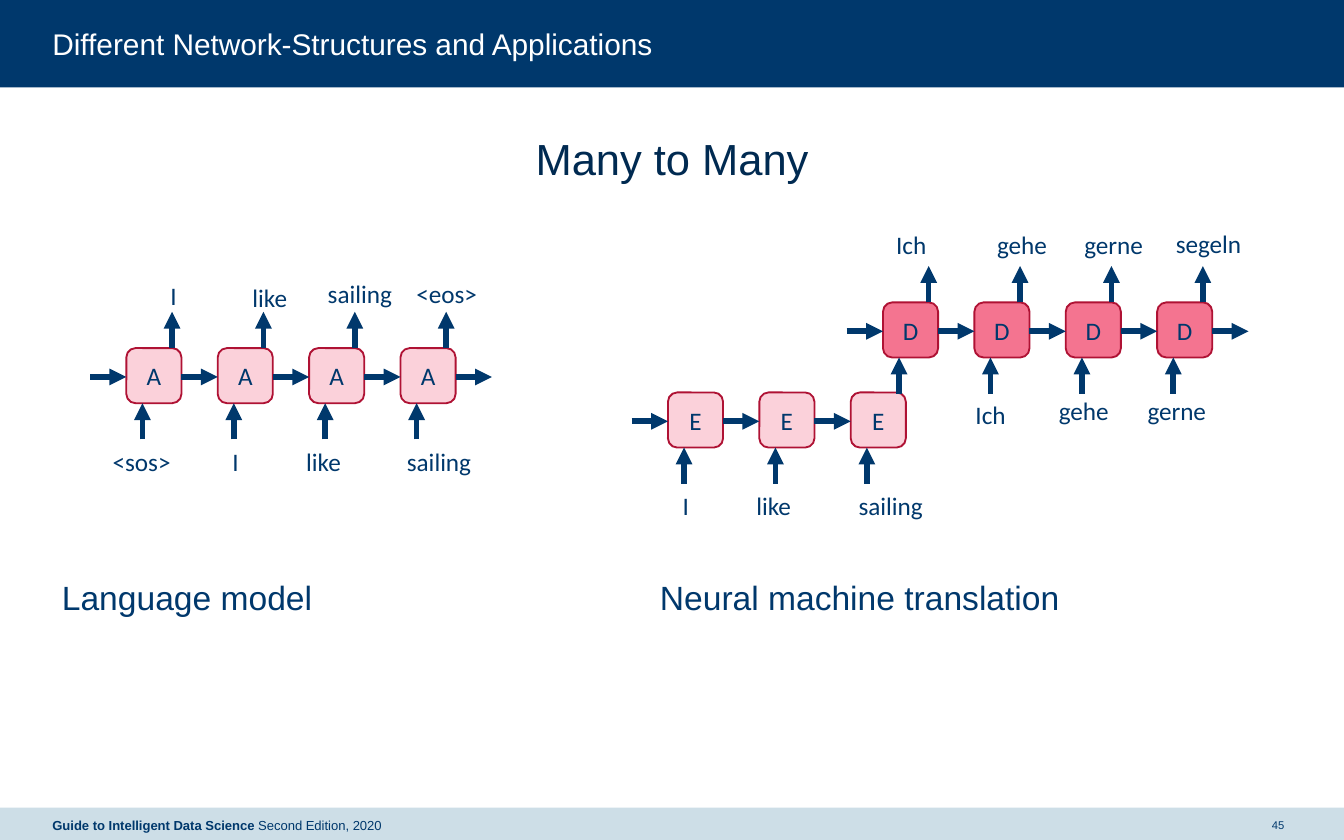
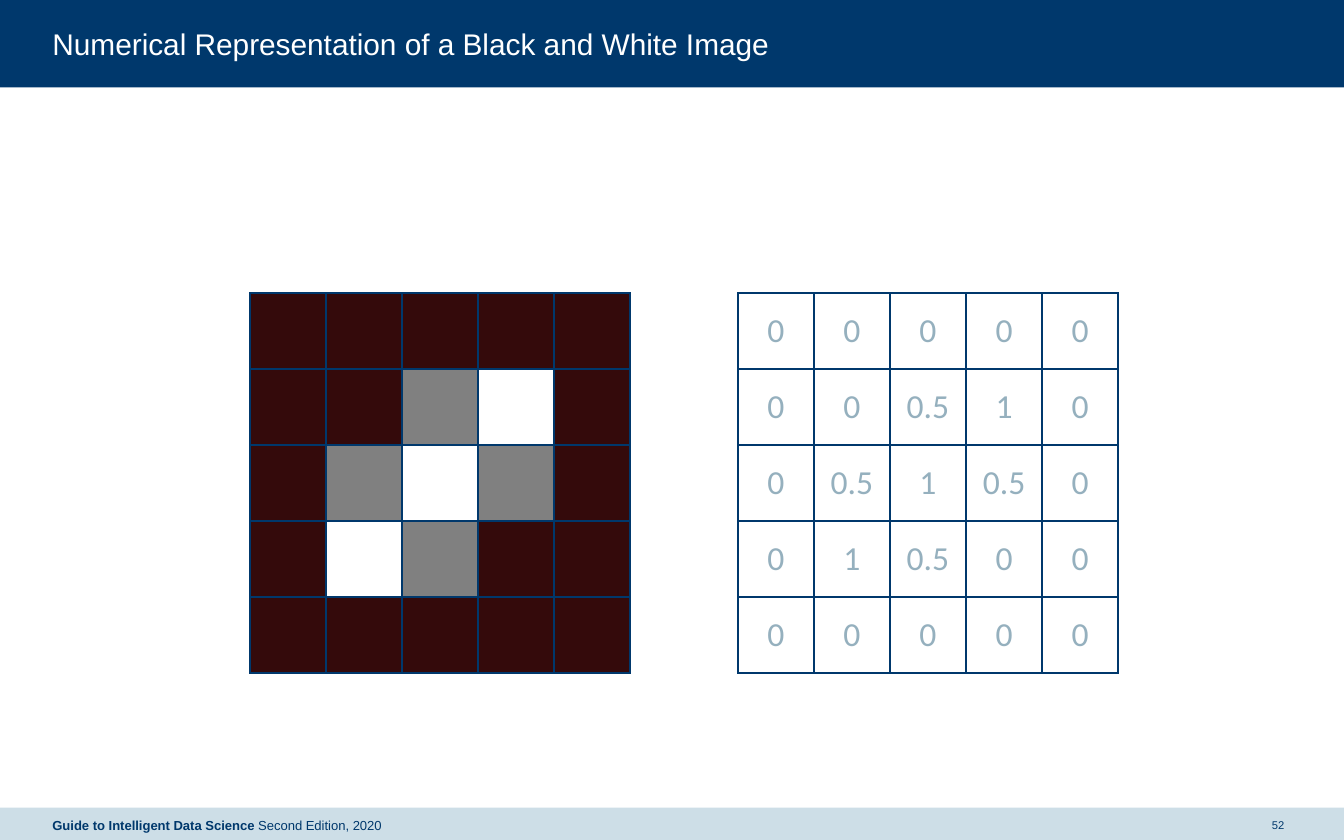
from dataclasses import dataclass

from lxml import etree
from pptx import Presentation
from pptx import util as u
from pptx.dml.color import RGBColor
from pptx.enum import shapes, text
from pptx.oxml import ns


@dataclass(frozen=True)
class Theme:
    navy: str = "00386C"
    deep_navy: str = "002A51"
    footer_band: str = "CDDEE7"
    white: str = "FFFFFF"
    pale_pink: str = "FBD1DA"
    strong_pink: str = "F47490"
    crimson: str = "AF1234"
    black_pixel: str = "340A0B"
    grey_pixel: str = "808080"
    digit: str = "95B0BE"
    sans: str = "Arial"
    diagram: str = "Calibri"
    title_size: float = 16
    headline_size: float = 23.3
    caption_size: float = 18
    label_size: float = 13.5
    digit_size: float = 18
    footer_size: float = 7
    number_size: float = 6


THEME = Theme()
LEFT, MIDDLE = text.MSO_ANCHOR.TOP, text.MSO_ANCHOR.MIDDLE
CENTER = text.PP_ALIGN.CENTER
NO_INSET = (0, 0)
SIDES = ("left", "right"), ("top", "bottom")

# Network chains: equally spaced cells joined by short arrows
CELL, PITCH, ARROW = 0.41, 0.68, 0.27
INPUT_X, OUTPUT_X = 0.12, 0.34

# Each word: text, left, top, width
LANGUAGE_WORDS = [
    ("<sos>", 0.74, 3.27, 0.81), ("I", 1.63, 3.27, 0.41),
    ("like", 2.18, 3.27, 0.48), ("sailing", 2.93, 3.27, 0.87),
    ("I", 1.17, 2.04, 0.41), ("like", 1.78, 2.05, 0.52),
    ("sailing", 2.34, 2.02, 0.79), ("<eos>", 3, 2.02, 0.87),
]
ENCODER_WORDS = [
    ("I", 4.98, 3.6, 0.41), ("like", 5.53, 3.6, 0.63), ("sailing", 6.29, 3.6, 0.82),
]
DECODER_WORDS = [
    ("Ich", 6.57, 1.66, 0.54), ("gehe", 7.32, 1.66, 0.62),
    ("gerne", 7.97, 1.66, 0.77), ("segeln", 8.65, 1.65, 0.78),
    ("Ich", 7.16, 2.92, 0.5), ("gehe", 7.78, 2.89, 0.78), ("gerne", 8.44, 2.89, 0.8),
]

PIXELS = [
    [0, 0, 0, 0, 0],
    [0, 0, 0.5, 1, 0],
    [0, 0.5, 1, 0.5, 0],
    [0, 1, 0.5, 0, 0],
    [0, 0, 0, 0, 0],
]
SHADES = {0: THEME.black_pixel, 0.5: THEME.grey_pixel, 1: THEME.white}
GRID_SIZE = 2.83


def inches(*lengths):
    return [u.Inches(length) for length in lengths]


def rgb(colour):
    return RGBColor.from_string(colour)


def apply(target, formats):
    for name, value in formats.items():
        setattr(target, name, value)


def write(paragraph, words, size, colour, font=THEME.sans, bold=False):
    run = paragraph.add_run()
    run.text = words
    apply(run.font, {"name": font, "size": u.Pt(size), "bold": bold})
    run.font.color.rgb = rgb(colour)


def add_text(slide, box, words, size, colour, font=THEME.sans, bold=False,
             align=None, anchor=LEFT, inset=(0.1, 0.05)):
    """Add a wrapping text box and return its paragraph."""
    frame = slide.shapes.add_textbox(*inches(*box)).text_frame
    apply(frame, {"word_wrap": True, "vertical_anchor": anchor})
    for sides, margin in zip(SIDES, inset):
        apply(frame, {f"margin_{side}": u.Inches(margin) for side in sides})
    paragraph = frame.paragraphs[0]
    paragraph.alignment = align
    write(paragraph, words, size, colour, font, bold)
    return paragraph


def add_block(slide, kind, box, fill):
    block = slide.shapes.add_shape(kind, *inches(*box))
    block.shadow.inherit = False
    block.fill.solid()
    block.fill.fore_color.rgb = rgb(fill)
    block.line.fill.background()
    return block


def add_cell(slide, left, top, letter, fill):
    cell = add_block(slide, shapes.MSO_SHAPE.ROUNDED_RECTANGLE,
                     (left, top, CELL, CELL), fill)
    cell.line.color.rgb = rgb(THEME.crimson)
    cell.line.width = u.Pt(1)
    cell.text_frame.vertical_anchor = MIDDLE
    paragraph = cell.text_frame.paragraphs[0]
    paragraph.alignment = CENTER
    write(paragraph, letter, THEME.label_size, THEME.navy, THEME.diagram)


def add_arrow(slide, x1, y1, x2, y2):
    arrow = slide.shapes.add_connector(
        shapes.MSO_CONNECTOR.STRAIGHT, *inches(x1, y1, x2, y2))
    arrow.line.color.rgb = rgb(THEME.navy)
    arrow.line.width = u.Pt(3)
    etree.SubElement(arrow.line._get_or_add_ln(), ns.qn("a:tailEnd"), type="triangle")
    etree.SubElement(arrow._element.spPr, ns.qn("a:effectLst"))


def add_chain(slide, left, top, letter, count, fill, words, has_outputs=True):
    """Add a row of recurrent cells with their arrows and words."""
    lefts = [left + i * PITCH for i in range(count)]
    middle, bottom = top + 0.215, top + CELL
    for x in lefts:
        add_cell(slide, x, top, letter, fill)
    for x in lefts:
        add_arrow(slide, x - ARROW, middle, x, middle)
        add_arrow(slide, x + INPUT_X, bottom + ARROW, x + INPUT_X, bottom)
        if has_outputs:
            add_arrow(slide, x + OUTPUT_X, top, x + OUTPUT_X, top - ARROW)
    if has_outputs:
        end = lefts[-1] + CELL
        add_arrow(slide, end, middle, end + ARROW, middle)
    for word, x, y, width in words:
        add_text(slide, (x, y, width, 0.33), word, THEME.label_size, THEME.navy,
                 THEME.diagram)


def add_borders(cell):
    properties = cell._tc.get_or_add_tcPr()
    for side in ("lnL", "lnR", "lnT", "lnB"):
        border = etree.SubElement(properties, ns.qn(f"a:{side}"), w=str(u.Pt(1)))
        fill = etree.SubElement(border, ns.qn("a:solidFill"))
        etree.SubElement(fill, ns.qn("a:srgbClr"), val=THEME.navy)


def add_pixel_grid(slide, left, top, shades=None):
    """Add the image as shaded cells, or as numbers when no shades are given."""
    count = len(PIXELS)
    grid = slide.shapes.add_table(
        count, count, *inches(left, top, GRID_SIZE, GRID_SIZE)).table
    apply(grid, {"first_row": False, "horz_banding": False})
    for column in grid.columns:
        column.width = u.Inches(GRID_SIZE / count)
    for row, values in enumerate(PIXELS):
        grid.rows[row].height = u.Inches(GRID_SIZE / count)
        for column, value in enumerate(values):
            cell = grid.cell(row, column)
            add_borders(cell)
            cell.fill.solid()
            cell.fill.fore_color.rgb = rgb(shades[value] if shades else THEME.white)
            if not shades:
                cell.vertical_anchor = MIDDLE
                paragraph = cell.text_frame.paragraphs[0]
                paragraph.alignment = CENTER
                write(paragraph, str(value), THEME.digit_size, THEME.digit,
                      THEME.diagram)


def add_slide(deck, title, number):
    """Add a blank slide with the title band, footer and page number."""
    slide = deck.slides.add_slide(deck.slide_layouts[6])
    rectangle = shapes.MSO_SHAPE.RECTANGLE
    add_block(slide, rectangle, (0, 0, 10, 0.65), THEME.navy)
    add_block(slide, rectangle, (0, 6.01, 10, 0.26), THEME.footer_band)
    footer = add_text(slide, (0.39, 6.01, 4.39, 0.26),
                      "Guide to Intelligent Data Science ", THEME.footer_size,
                      THEME.navy, bold=True, anchor=MIDDLE, inset=NO_INSET)
    write(footer, "Second Edition, 2020", THEME.footer_size, THEME.navy)
    add_text(slide, (0.39, 0.19, 9.22, 0.27), title, THEME.title_size, THEME.white,
             inset=NO_INSET)
    add_text(slide, (9.41, 6.01, 0.2, 0.26), str(number), THEME.number_size,
             THEME.navy, align=CENTER, anchor=MIDDLE, inset=NO_INSET)
    return slide


def build_networks(deck):
    slide = add_slide(deck, "Different Network-Structures and Applications", 45)
    add_text(slide, (0.39, 0.98, 9.22, 4.71), "Many to Many", THEME.headline_size,
             THEME.deep_navy, align=CENTER, inset=NO_INSET)
    add_chain(slide, 0.94, 2.59, "A", 4, THEME.pale_pink, LANGUAGE_WORDS)
    add_chain(slide, 4.97, 2.92, "E", 3, THEME.pale_pink, ENCODER_WORDS,
              has_outputs=False)
    add_chain(slide, 6.57, 2.25, "D", 4, THEME.strong_pink, DECODER_WORDS)
    for caption, left, width in (("Language model", 0.39, 3.28),
                                 ("Neural machine translation", 4.84, 3.72)):
        add_text(slide, (left, 4.25, width, 1.53), caption, THEME.caption_size,
                 THEME.navy, inset=(0.07, 0.04))


def build_pixels(deck):
    slide = add_slide(deck, "Numerical Representation of a Black and White Image", 52)
    add_pixel_grid(slide, 1.86, 2.18, SHADES)
    add_pixel_grid(slide, 5.49, 2.18)


def main():
    deck = Presentation()
    apply(deck, {"slide_width": u.Inches(10), "slide_height": u.Inches(6.25)})
    build_networks(deck)
    build_pixels(deck)
    deck.save("out.pptx")


if __name__ == "__main__":
    main()
